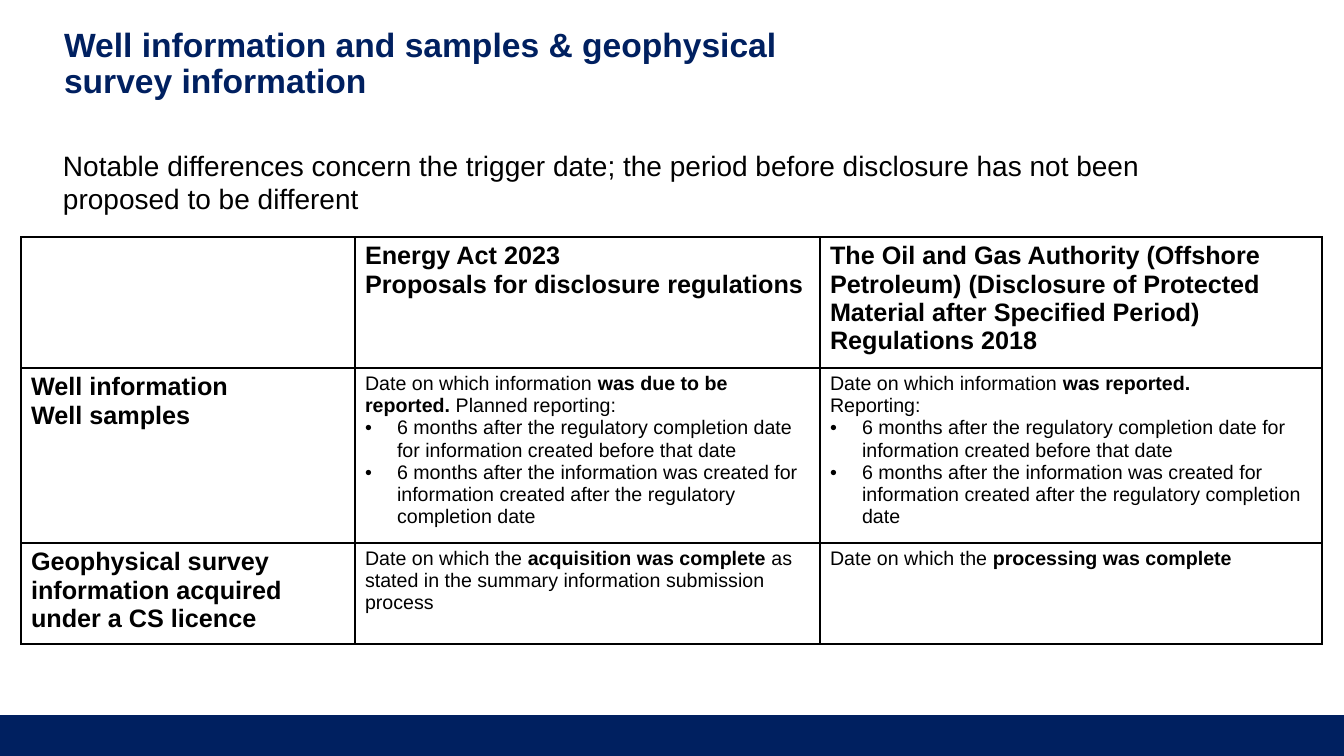
"""Build the slide comparing disclosure triggers for well and survey information."""
from dataclasses import dataclass

import lxml.etree
import pptx
import pptx.dml.color
import pptx.enum.shapes
import pptx.oxml.ns
import pptx.util

EMU_PER_PX = 914400 / 100.8


@dataclass(frozen=True)
class Theme:
    font: str = "Arial"
    navy: str = "002060"
    black: str = "000000"
    title_size: int = 24
    lead_size: int = 20
    heading_size: int = 18
    body_size: int = 14


@dataclass(frozen=True)
class Span:
    text: str
    bold: bool = False


@dataclass(frozen=True)
class Para:
    spans: tuple[Span, ...]
    size: int
    color: str
    bullet: bool = False


@dataclass(frozen=True)
class TextBox:
    left: int
    top: int
    width: int
    height: int
    margins: tuple[int, int, int, int]
    line_spacing: float
    para: Para


THEME = Theme()


def px(length: int) -> pptx.util.Emu:
    return pptx.util.Emu(round(length * EMU_PER_PX))


def rgb(color: str) -> pptx.dml.color.RGBColor:
    return pptx.dml.color.RGBColor.from_string(color)


def heading(text: str) -> Para:
    return Para((Span(text, True),), THEME.heading_size, THEME.black)


def body(*spans: Span) -> Para:
    return Para(spans, THEME.body_size, THEME.black)


def bullet(text: str) -> Para:
    return Para((Span(text),), THEME.body_size, THEME.black, bullet=True)


PAGE_WIDTH, PAGE_HEIGHT = 1344, 756
FOOTER_TOP = 715
BULLET_INDENT = 32
TABLE_LEFT, TABLE_TOP = 21, 237
COLUMN_WIDTHS = (334, 465, 502)
ROW_HEIGHTS = (130, 175, 101)

TEXT_BOXES = (
    TextBox(64, 28, 782, 56, (0, 0, 10, 5), 0.9, Para(
        (Span("Well information and samples & geophysical survey information", True),),
        THEME.title_size, THEME.navy)),
    TextBox(53, 143, 1198, 78, (10, 5, 10, 5), 1.0, Para(
        (Span("Notable differences concern the trigger date; the period before "
              "disclosure has not been proposed to be different"),),
        THEME.lead_size, THEME.black)),
)

REPORTING_DEADLINES = (
    bullet("6 months after the regulatory completion date for information "
           "created before that date"),
    bullet("6 months after the information was created for information created "
           "after the regulatory completion date"),
)

TABLE_ROWS: tuple[tuple[tuple[Para, ...], ...], ...] = (
    (
        (),
        (heading("Energy Act 2023"), heading("Proposals for disclosure regulations")),
        (heading("The Oil and Gas Authority (Offshore Petroleum) (Disclosure of "
                 "Protected Material after Specified Period) Regulations 2018"),),
    ),
    (
        (heading("Well information"), heading("Well samples")),
        (body(Span("Date on which information "), Span("was due to be reported. ", True),
              Span("Planned reporting:")), *REPORTING_DEADLINES),
        (body(Span("Date on which information "), Span("was reported.", True)),
         body(Span("Reporting:")), *REPORTING_DEADLINES),
    ),
    (
        (heading("Geophysical survey information acquired under a CS licence"),),
        (body(Span("Date on which the "), Span("acquisition was complete ", True),
              Span("as stated in the summary information submission process")),),
        (body(Span("Date on which the "), Span("processing was complete", True)),),
    ),
)


def add_bullet(paragraph) -> None:
    properties = paragraph._p.get_or_add_pPr()
    properties.set("marL", str(px(BULLET_INDENT)))
    properties.set("indent", str(-px(BULLET_INDENT)))
    for tag, name, value in (("a:buFont", "typeface", THEME.font), ("a:buChar", "char", "•")):
        mark = lxml.etree.SubElement(properties, pptx.oxml.ns.qn(tag))
        mark.set(name, value)


def write_paras(frame, paras: tuple[Para, ...], line_spacing: float = 1.0) -> None:
    frame.text = "\n".join("" for _ in paras)
    for paragraph, para in zip(frame.paragraphs, paras):
        paragraph.line_spacing = line_spacing
        if para.bullet:
            add_bullet(paragraph)
        for span in para.spans:
            run = paragraph.add_run()
            run.text = span.text
            run.font.name = THEME.font
            run.font.size = pptx.util.Pt(para.size)
            run.font.bold = span.bold
            run.font.color.rgb = rgb(para.color)


def draw_text_box(page, box: TextBox) -> None:
    shape = page.shapes.add_textbox(*map(px, (box.left, box.top, box.width, box.height)))
    frame = shape.text_frame
    frame.word_wrap = True
    (frame.margin_left, frame.margin_top,
     frame.margin_right, frame.margin_bottom) = map(px, box.margins)
    write_paras(frame, (box.para,), box.line_spacing)


def draw_footer(page) -> None:
    footer = page.shapes.add_shape(
        pptx.enum.shapes.MSO_SHAPE.RECTANGLE,
        *map(px, (0, FOOTER_TOP, PAGE_WIDTH, PAGE_HEIGHT - FOOTER_TOP)))
    footer.shadow.inherit = False
    footer.fill.solid()
    footer.fill.fore_color.rgb = rgb(THEME.navy)
    footer.line.fill.background()


def add_borders(cell) -> None:
    properties = cell._tc.get_or_add_tcPr()
    for side in ("L", "R", "T", "B"):
        line = lxml.etree.SubElement(properties, pptx.oxml.ns.qn(f"a:ln{side}"))
        line.set("w", str(pptx.util.Pt(1)))
        fill = lxml.etree.SubElement(line, pptx.oxml.ns.qn("a:solidFill"))
        color = lxml.etree.SubElement(fill, pptx.oxml.ns.qn("a:srgbClr"))
        color.set("val", THEME.black)


def draw_table(page) -> None:
    table = page.shapes.add_table(
        len(ROW_HEIGHTS), len(COLUMN_WIDTHS),
        *map(px, (TABLE_LEFT, TABLE_TOP, sum(COLUMN_WIDTHS), sum(ROW_HEIGHTS)))).table
    table.first_row = table.horz_banding = False
    for column, width in zip(table.columns, COLUMN_WIDTHS):
        column.width = px(width)
    for row, height, contents in zip(table.rows, ROW_HEIGHTS, TABLE_ROWS):
        row.height = px(height)
        for cell, paras in zip(row.cells, contents):
            add_borders(cell)
            cell.fill.background()
            write_paras(cell.text_frame, paras)


def main() -> None:
    deck = pptx.Presentation()
    deck.slide_width, deck.slide_height = px(PAGE_WIDTH), px(PAGE_HEIGHT)
    page = deck.slides.add_slide(deck.slide_layouts[6])
    draw_footer(page)
    for box in TEXT_BOXES:
        draw_text_box(page, box)
    draw_table(page)
    deck.save("out.pptx")


if __name__ == "__main__":
    main()
